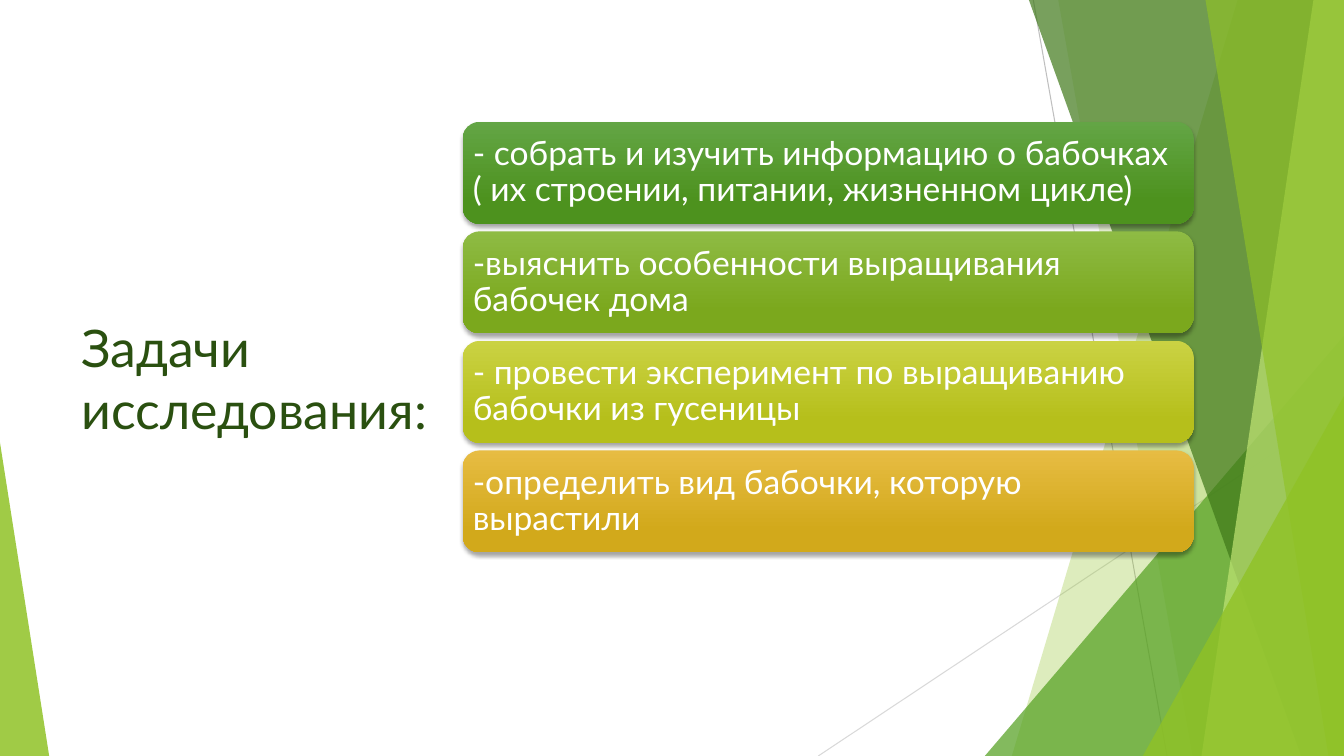
from dataclasses import dataclass

from lxml import etree
from pptx import Presentation
from pptx.dml.color import RGBColor
from pptx.enum.shapes import MSO_CONNECTOR, MSO_SHAPE
from pptx.enum.text import MSO_ANCHOR, PP_ALIGN
from pptx.oxml.ns import qn
from pptx.util import Cm, Pt

STRAIGHT = MSO_CONNECTOR.STRAIGHT
TRIANGLE = MSO_SHAPE.ISOSCELES_TRIANGLE
ROUNDED = MSO_SHAPE.ROUNDED_RECTANGLE
MIDDLE = MSO_ANCHOR.MIDDLE
LEFT = PP_ALIGN.LEFT

WIDTH, HEIGHT = 33.87, 19.05  # centimetres


@dataclass(frozen=True)
class Theme:
    font: str = "Lato"
    title_size: int = 37
    card_size: int = 24
    title: str = "2A5010"
    white: str = "FFFFFF"
    lime: str = "90C226"
    pale: str = "C0E474"
    green: str = "54A021"
    forest: str = "3F7819"
    line_dark: str = "BFBFBF"
    line_light: str = "D9D9D9"
    shadow: str = "000000"
    cards: tuple = (("63A545", "4D921E"), ("8EBB44", "7BA81D"),
                    ("CAD243", "B6BF1B"), ("E7BC43", "D2A91B"))


class SlideBuilder:
    def __init__(self, slide, theme):
        self.shapes = slide.shapes
        self.theme = theme

    def line(self, x1, y1, x2, y2, color):
        s = self.shapes.add_connector(STRAIGHT, Cm(x1), Cm(y1), Cm(x2), Cm(y2))
        s.line.color.rgb = RGBColor.from_string(color)
        s.line.width = Pt(0.75)
        etree.SubElement(s.element.spPr, qn("a:effectLst"))

    def paint(self, s, color, opacity):
        s.shadow.inherit = False
        s.line.fill.background()
        s.fill.solid()
        s.fill.fore_color.rgb = RGBColor.from_string(color)
        clr = s.element.spPr.find(qn("a:solidFill"))[0]
        etree.SubElement(clr, qn("a:alpha"), val=str(opacity * 1000))

    def band(self, top_x, bottom_x, color, opacity):
        """Full-height band from a slanted left side to the right slide edge."""
        fb = self.shapes.build_freeform(Cm(top_x), 0)
        corners = [(WIDTH, 0), (WIDTH, HEIGHT), (bottom_x, HEIGHT)]
        fb.add_line_segments([(Cm(x), Cm(y)) for x, y in corners], close=True)
        self.paint(fb.convert_to_shape(), color, opacity)

    def corner(self, left, top, width, apex, color, opacity):
        """Right triangle standing on the bottom slide edge."""
        s = self.shapes.add_shape(TRIANGLE, Cm(left), Cm(top), Cm(width),
                                  Cm(HEIGHT - top))
        s.adjustments[0] = apex
        self.paint(s, color, opacity)

    def text(self, s, text, size, color, frame, spacing=1.0):
        tf = s.text_frame
        for name, value in frame.items():
            setattr(tf, name, value)
        p = tf.paragraphs[0]
        p.alignment = LEFT
        p.line_spacing = spacing
        r = p.add_run()
        r.text = text
        style = {"name": self.theme.font, "size": Pt(size)}
        for name, value in style.items():
            setattr(r.font, name, value)
        r.font.color.rgb = RGBColor.from_string(color)

    def title(self, left, top, width, height, text):
        s = self.shapes.add_textbox(Cm(left), Cm(top), Cm(width), Cm(height))
        frame = {"word_wrap": True, "vertical_anchor": MIDDLE}
        self.text(s, text, self.theme.title_size, self.theme.title, frame)

    def card(self, left, top, width, height, text, colors):
        s = self.shapes.add_shape(ROUNDED, Cm(left), Cm(top), Cm(width), Cm(height))
        s.line.fill.background()
        s.fill.gradient()
        s.fill.gradient_angle = 270
        for stop, color, position in zip(s.fill.gradient_stops, colors, (0, 0.78)):
            stop.color.rgb = RGBColor.from_string(color)
            stop.position = position
        self.drop_shadow(s)
        pad = Cm(0.13)
        frame = {"word_wrap": True, "vertical_anchor": MIDDLE,
                 "margin_left": pad, "margin_right": pad,
                 "margin_top": pad, "margin_bottom": pad}
        self.text(s, text, self.theme.card_size, self.theme.white, frame, 0.9)

    def drop_shadow(self, s):
        s.shadow.inherit = False
        effects = s.element.spPr.find(qn("a:effectLst"))
        outer = etree.SubElement(effects, qn("a:outerShdw"), blurRad=str(Pt(3)),
                                 dist=str(Pt(2)), dir="5400000", rotWithShape="0")
        clr = etree.SubElement(outer, qn("a:srgbClr"), val=self.theme.shadow)
        etree.SubElement(clr, qn("a:alpha"), val="35000")


def main():
    prs = Presentation()
    prs.slide_width, prs.slide_height = Cm(WIDTH), Cm(HEIGHT)
    theme = Theme()
    page = SlideBuilder(prs.slides.add_slide(prs.slide_layouts[6]), theme)

    # Background facets, back to front
    page.line(26.04, 0, 29.41, HEIGHT, theme.line_dark)
    page.line(WIDTH, 10.24, 20.62, HEIGHT, theme.line_light)
    page.band(31.19, 25.5, theme.lime, 30)
    page.band(26.67, 30.05, theme.lime, 20)
    page.corner(24.82, 8.46, WIDTH - 24.82, 1, theme.green, 72)
    page.band(25.93, 32.79, theme.forest, 70)
    page.band(33.1, 30.28, theme.pale, 70)
    page.band(30.38, 33.48, theme.lime, 65)
    page.corner(28.8, 9.98, WIDTH - 28.8, 1, theme.lime, 80)
    page.corner(0, 11.15, 1.24, 0, theme.lime, 85)

    # Title
    page.title(1.8, 3.84, 9.86, 11.38, "Задачи исследования:")

    # Task cards
    tasks = [
        "- собрать и изучить информацию о бабочках ( их строении, питании, жизненном цикле)",
        "-выяснить особенности выращивания бабочек дома",
        "- провести эксперимент по выращиванию бабочки из гусеницы",
        "-определить вид бабочки, которую вырастили",
    ]
    for i, (task, colors) in enumerate(zip(tasks, theme.cards)):
        page.card(11.66, 3.07 + i * 2.76, 18.42, 2.57, task, colors)

    prs.save("out.pptx")


if __name__ == "__main__":
    main()
